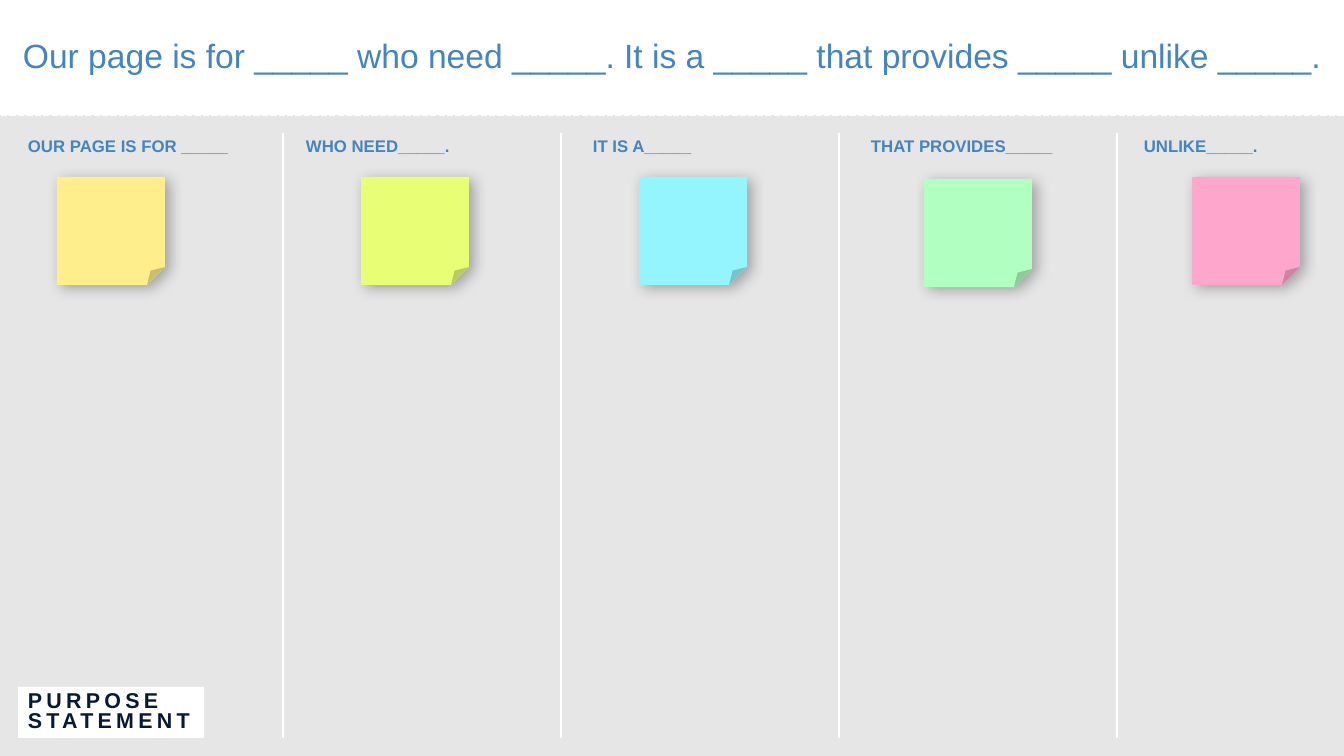
"""Build the purpose statement board: a headline over five note columns."""
from lxml.etree import SubElement
from pptx import Presentation
from pptx.dml.color import RGBColor
from pptx.enum.dml import MSO_LINE
from pptx.enum.shapes import MSO_CONNECTOR, MSO_SHAPE
from pptx.enum.text import MSO_ANCHOR, PP_ALIGN
from pptx.oxml.ns import qn
from pptx.util import Pt

TITLE = "Our page is for _____ who need _____. It is a _____ that provides _____ unlike _____."
LABEL = "PURPOSE STATEMENT"
COLUMNS = [
    ("OUR PAGE IS FOR _____", 18, 238, (57, 177), "yellow"),
    ("WHO NEED_____.", 296, 238, (361, 177), "lime"),
    ("IT IS A_____", 583, 238, (639, 177), "cyan"),
    ("THAT PROVIDES_____", 861, 238, (924, 179), "green"),
    ("UNLIKE_____.", 1134, 192, (1192, 177), "pink"),
]
COLORS = {
    "back": "E7E6E6", "white": "FFFFFF", "blue": "4384C1", "navy": "061937",
    "yellow": "FFEE8B", "lime": "E8FF75", "cyan": "95F5FF",
    "green": "B1FFC1", "pink": "FFA6CD", "shade": "000000",
}
WIDTH, HEIGHT, BAND = 1344, 756, 115
RULE, STEP, TOP, BOTTOM = 283, 278, 133, 738
NOTE = 108
UNIT = 914400 / 100.8


def px(*vals):
    return [round(v * UNIT) for v in vals]


def rgb(name):
    return RGBColor.from_string(COLORS[name])


def panel(kind, box, color):
    shape = slide.shapes.add_shape(kind, *px(*box))
    shape.shadow.inherit = False
    shape.fill.solid()
    shape.fill.fore_color.rgb = rgb(color)
    shape.line.fill.background()
    return shape


def write(shape, text, size, color, bold, anchor, space=1.0, align=PP_ALIGN.LEFT):
    frame = shape.text_frame
    frame.word_wrap = True
    frame.vertical_anchor = anchor
    para = frame.paragraphs[0]
    para.text = text
    para.alignment = align
    para.line_spacing = space
    font = para.font
    font.name, font.size, font.bold = "Arial", Pt(size), bold
    font.color.rgb = rgb(color)
    return para


def shade(shape):
    effects = shape._element.spPr.find(qn("a:effectLst"))
    outer = SubElement(effects, qn("a:outerShdw"), blurRad=str(Pt(10.5)),
                       dist=str(Pt(4)), dir=str(37 * 60000),
                       algn="tl", rotWithShape="0")
    tint = SubElement(outer, qn("a:srgbClr"), val=COLORS["shade"])
    SubElement(tint, qn("a:alpha"), val="29000")


deck = Presentation()
deck.slide_width, deck.slide_height = px(WIDTH, HEIGHT)
slide = deck.slides.add_slide(deck.slide_layouts[6])
slide.background.fill.solid()
slide.background.fill.fore_color.rgb = rgb("back")

head = panel(MSO_SHAPE.RECTANGLE, (0, 0, WIDTH, BAND), "white")
head.line.color.rgb = rgb("white")
head.line.width = Pt(1.5)
head.line.dash_style = MSO_LINE.SQUARE_DOT
write(head, TITLE, 24, "blue", False, MSO_ANCHOR.MIDDLE, 0.9, PP_ALIGN.CENTER)

tag = panel(MSO_SHAPE.RECTANGLE, (18, 687, 186, 51), "white")
para = write(tag, LABEL, 15.3, "navy", True, MSO_ANCHOR.BOTTOM, 0.8)
para.runs[0].font._element.set("spc", "300")

for i in range(len(COLUMNS) - 1):
    x = RULE + i * STEP
    rule = slide.shapes.add_connector(MSO_CONNECTOR.STRAIGHT, *px(x, TOP, x, BOTTOM))
    rule.line.color.rgb = rgb("white")
    rule.line.width = Pt(2)
    SubElement(rule._element.spPr, qn("a:effectLst"))

for text, left, width, spot, color in COLUMNS:
    shade(panel(MSO_SHAPE.FOLDED_CORNER, (*spot, NOTE, NOTE), color))
    box = slide.shapes.add_textbox(*px(left, 131, width, 30))
    write(box, text, 12, "blue", True, MSO_ANCHOR.TOP)

deck.save("out.pptx")
